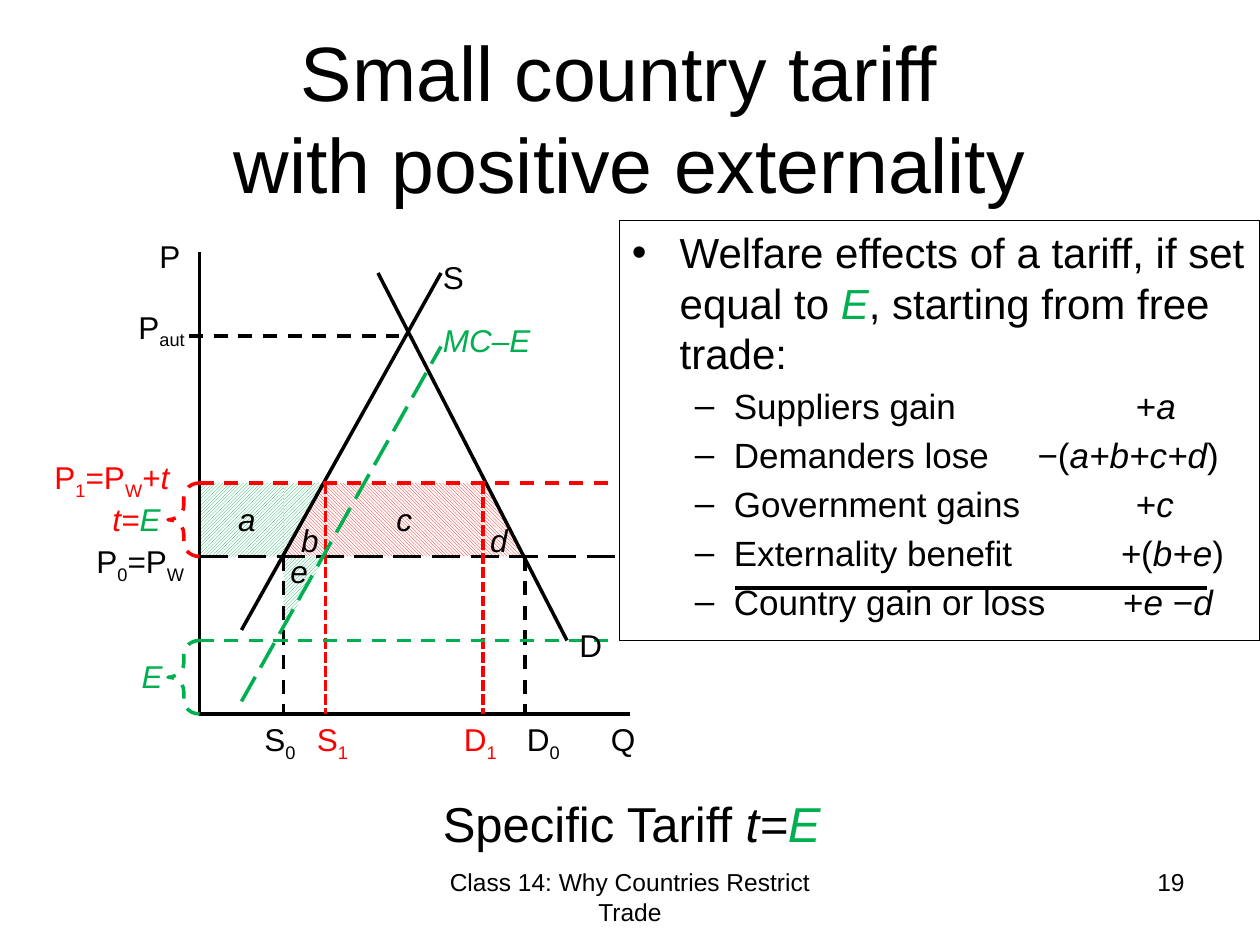
from lxml.etree import SubElement
from pptx import Presentation
from pptx.dml.color import RGBColor
from pptx.enum.dml import MSO_LINE as Dash, MSO_PATTERN as Hatch
from pptx.enum.shapes import MSO_CONNECTOR as Link, MSO_SHAPE as Form
from pptx.enum.text import MSO_ANCHOR as Anchor, PP_ALIGN as Align
from pptx.oxml.ns import qn
from pptx.util import Inches, Pt

COLS, ROWS = 120, 90
BLACK, WHITE, RED, GREEN = "000000", "FFFFFF", "FF0000", "00B050"
UP, DOWN = Hatch.DARK_UPWARD_DIAGONAL, Hatch.DARK_DOWNWARD_DIAGONAL

# Columns and rows of the diagram
LEFT, S0, S1, D1, D0 = 19, 27, 31, 46, 50
TAX, WORLD, EXT, BASE = 46, 53, 61, 68
HIGH = 4.8  # rows of a one-line label

SUB = {"sub": True}
IT = {"it": True}
GOOD = {"it": True, "color": GREEN}


def unit(n):
    return Inches(n / 12)


def rgb(code):
    return RGBColor.from_string(code)


def add_runs(par, runs, size, color=BLACK, it=False):
    """Each run is a string or a pair of string and format; "\\n" breaks the line."""
    for run in runs:
        words, form = (run, {}) if isinstance(run, str) else run
        if words == "\n":
            par.add_line_break()
            continue
        bit = par.add_run()
        bit.text = words
        font = bit.font
        font.name, font.size = "Arial", Pt(size)
        font.italic = form.get("it", it)
        font.color.rgb = rgb(form.get("color", color))
        if form.get("sub"):
            font._element.set("baseline", "-25000")


def text(slide, box, *runs, size=18, align=Align.LEFT, anchor=Anchor.TOP,
         wrap=True, **form):
    frame = slide.shapes.add_textbox(*map(unit, box)).text_frame
    frame.word_wrap = wrap
    frame.vertical_anchor = anchor
    par = frame.paragraphs[0]
    par.alignment = align
    add_runs(par, runs, size, **form)


def line(slide, start, end, color=BLACK, dash=None):
    link = slide.shapes.add_connector(Link.STRAIGHT, *map(unit, start + end))
    link.line.color.rgb = rgb(color)
    link.line.width = Pt(2)
    if dash:
        link.line.dash_style = dash
    SubElement(link._element.spPr, qn("a:effectLst"))


def area(slide, form, x, y, end, base, color, hatch, flip=False):
    shape = slide.shapes.add_shape(form, *map(unit, (x, y, end - x, base - y)))
    shape.shadow.inherit = False
    shape.line.fill.background()
    shape.fill.patterned()
    shape.fill.pattern = hatch
    shape.fill.fore_color.rgb = rgb(color)
    shape.fill.back_color.rgb = rgb(WHITE)
    if flip:
        shape._element.spPr.get_or_add_xfrm().set("flipV", "1")


def brace(slide, top, color):
    shape = slide.shapes.add_shape(
        Form.LEFT_BRACE, *map(unit, (LEFT - 3, top, 3, WORLD - TAX)))
    shape.adjustments[0] = 0.44
    shape.shadow.inherit = False
    shape.fill.background()
    shape.line.color.rgb = rgb(color)
    shape.line.width = Pt(2)
    shape.line.dash_style = Dash.DASH


def bullet(par, mark, left, hang, tab=None):
    """Hanging bullet, with an optional tab stop in inches from the inset."""
    props = par._p.get_or_add_pPr()
    props.set("marL", str(Inches(left)))
    props.set("indent", str(-Inches(hang)))
    SubElement(props, qn("a:buFont"), typeface="Arial")
    SubElement(props, qn("a:buChar"), char=mark)
    if tab:
        stops = SubElement(props, qn("a:tabLst"))
        SubElement(stops, qn("a:tab"), pos=str(Inches(tab)), algn="l")


def effects(slide):
    box = slide.shapes.add_textbox(*map(unit, (59, 21, 61, 40)))
    box.line.color.rgb = rgb(BLACK)
    box.line.width = Pt(0.75)
    frame = box.text_frame
    frame.word_wrap = True
    head = frame.paragraphs[0]
    head.space_before = Pt(4.8)
    bullet(head, "•", 0.38, 0.38)
    add_runs(head, ["Welfare effects of a tariff, if set equal to ", ("E", GOOD),
                    ", starting from free trade:"], 24)
    items = [
        ("Suppliers gain", 4, "+", ("a", IT)),
        ("Demanders lose", 3.22, "−(", ("a+b+c+d", IT), ")"),
        ("Government gains", 4, "+", ("c", IT)),
        ("Externality benefit", 3.88, ("+", IT), "(", ("b+e", IT), ")"),
        ("Country gain or loss", 3.9, "+", ("e ", IT), "−", ("d", IT)),
    ]
    for name, tab, *value in items:
        par = frame.add_paragraph()
        par.level = 1
        par.space_before = Pt(4)
        bullet(par, "–", 0.81, 0.31, tab)
        add_runs(par, [name + "\t", *value], 20)
    line(slide, (70, 56), (115, 56))


def areas(slide):
    area(slide, Form.RECTANGLE, LEFT, TAX, D1, WORLD, RED, DOWN)
    area(slide, Form.RIGHT_TRIANGLE, D1, TAX, D0, WORLD, RED, DOWN)
    area(slide, Form.RECTANGLE, LEFT, TAX, S0, WORLD, GREEN, UP)
    for top in (TAX, WORLD):
        area(slide, Form.RIGHT_TRIANGLE, S0, top, S1, top + 7, GREEN, UP, flip=True)


def curves(slide):
    line(slide, (LEFT, BASE), (60, BASE))
    line(slide, (LEFT, BASE), (LEFT, 24))
    line(slide, (23, 60), (42, 26))
    line(slide, (54, EXT), (36, 26))
    line(slide, (LEFT, WORLD), (59, WORLD), dash=Dash.LONG_DASH)
    line(slide, (18, 32), (38, 32), dash=Dash.DASH)
    for x in (S0, D0):
        line(slide, (x, WORLD), (x, BASE), dash=Dash.DASH)
    line(slide, (LEFT, TAX), (58, TAX), RED, Dash.DASH)
    for x in (S1, D1):
        line(slide, (x, TAX), (x, BASE), RED, Dash.SQUARE_DOT)
    line(slide, (LEFT, EXT), (58, EXT), GREEN, Dash.DASH)
    line(slide, (23, 66.8), (42, 33), GREEN, Dash.LONG_DASH)
    brace(slide, TAX, RED)
    brace(slide, EXT, GREEN)


def labels(slide):
    for name, x, y, wide in [("P", 14, 22, 9), ("S", 41, 24, 9),
                             ("D", 54, 59, 5), ("Q", 57, BASE, 9)]:
        text(slide, (x, y, wide, HIGH), name)
    for name, low, x, color in [("S", "0", 24, BLACK), ("D", "0", 49, BLACK),
                                ("S", "1", 29, RED), ("D", "1", 43, RED)]:
        text(slide, (x, BASE, 6, HIGH), name, (low, SUB), color=color)
    for name, x, y in [("a", 19, 47), ("b", 25, 49), ("c", 34, 47),
                       ("d", 43, 49), ("e", 24, 52)]:
        text(slide, (x, y, 9, HIGH), name, align=Align.CENTER, it=True)
    text(slide, (12, 28.7, 9, HIGH), "P", ("aut", SUB))
    text(slide, (8, 51, 12, HIGH), "P", ("0", SUB), "=P", ("W", SUB))
    text(slide, (4, 43, 15, HIGH), "P", ("1", SUB), "=P", ("W", SUB), "+",
         ("t", IT), color=RED)
    text(slide, (7, 47, 12, HIGH), "t=", ("E", GOOD),
         align=Align.CENTER, color=RED, it=True)
    text(slide, (11, 62, 7, HIGH), ("E", GOOD), align=Align.CENTER)
    text(slide, (41, 30, 13, HIGH), ("MC–E", GOOD))


def main():
    deck = Presentation()
    deck.slide_width, deck.slide_height = unit(COLS), unit(ROWS)
    slide = deck.slides.add_slide(deck.slide_layouts[6])
    areas(slide)
    text(slide, (6, 3.6, 108, 15), "Small country tariff ", "\n",
         "with positive externality", size=44, align=Align.CENTER,
         anchor=Anchor.MIDDLE)
    curves(slide)
    labels(slide)
    effects(slide)
    text(slide, (41, 75, 39, 12.5), "Specific Tariff ", ("t=", IT), ("E", GOOD),
         size=28, wrap=False)
    text(slide, (41, 82, 38, 6.2), "Class 14: Why Countries Restrict Trade",
         size=14, align=Align.CENTER)
    text(slide, (86, 82, 28, 6.2), "19", size=14, align=Align.RIGHT)
    deck.save("out.pptx")


if __name__ == "__main__":
    main()
